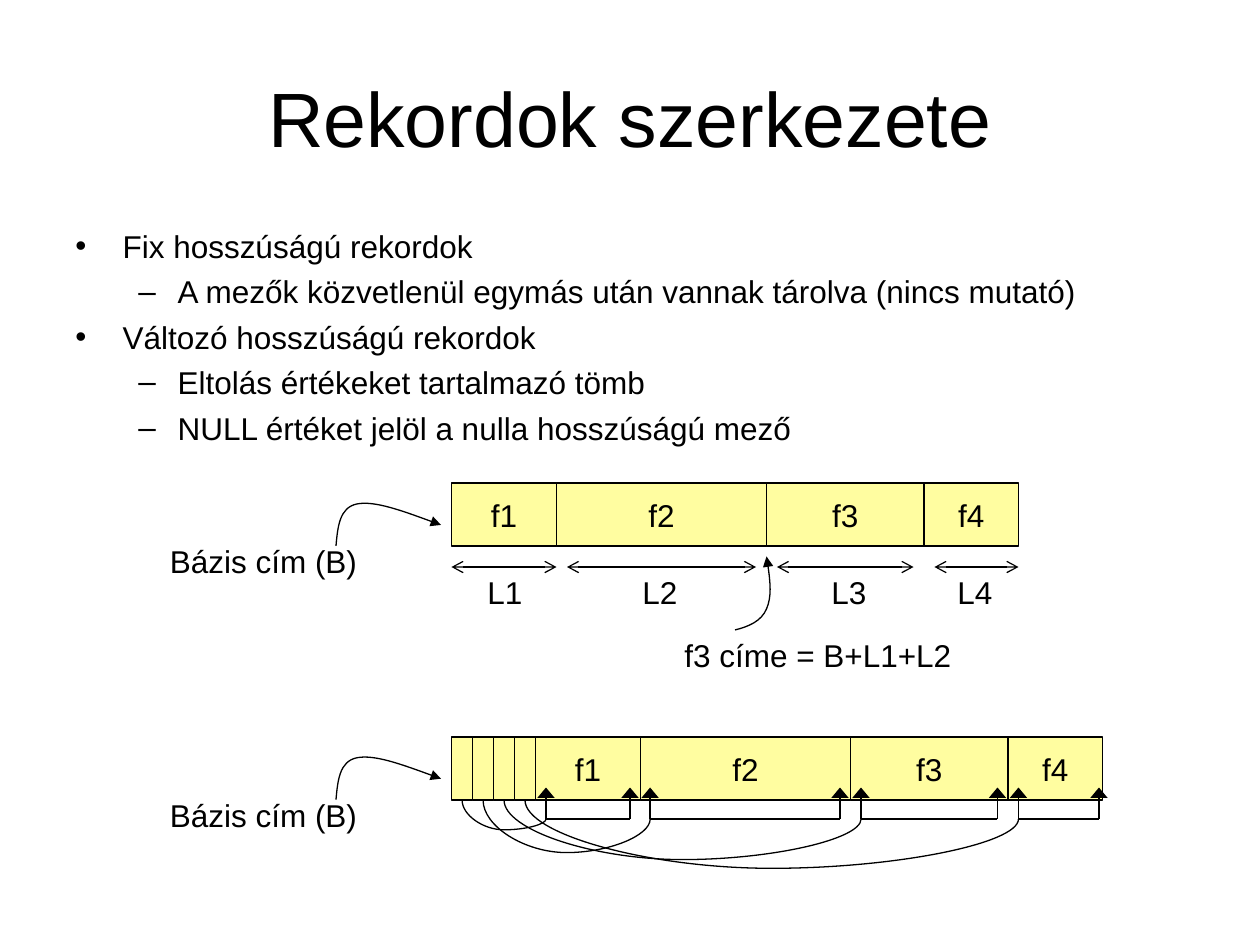
from dataclasses import dataclass
from itertools import accumulate

from lxml.etree import SubElement
from pptx import Presentation
from pptx.dml.color import RGBColor
from pptx.enum.shapes import MSO_CONNECTOR as Connector, MSO_SHAPE as Shape
from pptx.enum.text import MSO_ANCHOR as Anchor, PP_ALIGN as Align
from pptx.oxml.ns import qn
from pptx.util import Pt


@dataclass(frozen=True)
class Theme:
    font: str = "Arial"
    ink: RGBColor = RGBColor(0, 0, 0)
    field: RGBColor = RGBColor(0xFF, 0xFD, 0xA0)
    title_size: float = 44
    text_size: float = 18
    line_width: float = 0.75


class Board:
    """Draws styled elements on one slide, with lengths in points."""

    def __init__(self, slide, theme):
        self.slide = slide
        self.theme = theme

    def add_run(self, paragraph, text, size=None):
        run = paragraph.add_run()
        run.text = text
        run.font.name = self.theme.font
        run.font.size = Pt(size or self.theme.text_size)
        run.font.color.rgb = self.theme.ink

    def text(self, left, top, width, height, text="", size=None, wrap=False):
        box = self.slide.shapes.add_textbox(Pt(left), Pt(top), Pt(width), Pt(height))
        box.text_frame.word_wrap = wrap
        if text:
            self.add_run(box.text_frame.paragraphs[0], text, size)
        return box.text_frame

    def title(self, text):
        frame = self.text(36, 21.6, 648, 90, text, self.theme.title_size, wrap=True)
        frame.vertical_anchor = Anchor.MIDDLE
        frame.paragraphs[0].alignment = Align.CENTER

    def outline(self, items):
        """Set (level, text) pairs as a bulleted list."""
        frame = self.text(36, 126, 648, 356.4, wrap=True)
        for index, (level, text) in enumerate(items):
            paragraph = frame.add_paragraph() if index else frame.paragraphs[0]
            paragraph.level = level
            paragraph.space_before = Pt(4.4)
            margin, indent, bullet = ((27, -27, "•"), (58.5, -22.5, "–"))[level]
            properties = paragraph._p.get_or_add_pPr()
            properties.set("marL", str(Pt(margin)))
            properties.set("indent", str(Pt(indent)))
            SubElement(properties, qn("a:buFont"), typeface=self.theme.font)
            SubElement(properties, qn("a:buChar"), char=bullet)
            self.add_run(paragraph, text)

    def cell(self, left, top, width, height, text=""):
        shape = self.slide.shapes.add_shape(
            Shape.RECTANGLE, Pt(left), Pt(top), Pt(width), Pt(height))
        shape.shadow.inherit = False
        shape.fill.solid()
        shape.fill.fore_color.rgb = self.theme.field
        self.stroke(shape)
        if text:
            frame = shape.text_frame
            frame.word_wrap = False
            frame.vertical_anchor = Anchor.MIDDLE
            frame.paragraphs[0].alignment = Align.CENTER
            self.add_run(frame.paragraphs[0], text)

    def stroke(self, shape, head=None, tail=None, head_width="med"):
        shape.line.color.rgb = self.theme.ink
        shape.line.width = Pt(self.theme.line_width)
        line = shape._element.spPr.find(qn("a:ln"))
        if head:
            SubElement(line, qn("a:headEnd"), type=head, w=head_width)
        if tail:
            SubElement(line, qn("a:tailEnd"), type=tail)

    def connector(self, start, end, kind=Connector.STRAIGHT, **ends):
        connector = self.slide.shapes.add_connector(
            kind, *(Pt(value) for value in (*start, *end)))
        self.stroke(connector, **ends)
        SubElement(connector._element.spPr, qn("a:effectLst"))
        return connector

    def sag(self, start, end, depth):
        """Hang a curved connector that dips by depth below its start."""
        (x1, y1), (x2, y2) = start, end
        x, y = (x1 + x2) / 2, (y1 + y2) / 2
        half_width, half_height = (y2 - y1) / 2, (x2 - x1) / 2
        connector = self.connector((x + half_width, y - half_height),
                                   (x - half_width, y + half_height), Connector.CURVE)
        properties = connector._element.spPr
        properties.find(qn("a:xfrm")).set("rot", str(270 * 60000))
        geometry = properties.find(qn("a:prstGeom"))
        adjustments = geometry.find(qn("a:avLst"))
        if adjustments is None:
            adjustments = SubElement(geometry, qn("a:avLst"))
        SubElement(adjustments, qn("a:gd"), name="adj1",
                   fmla=f"val {round(depth / (y2 - y1) * 100000)}")

    def curved_arrow(self, start, *controls):
        """Draw Bézier segments; each takes three of the control points."""
        builder = self.slide.shapes.build_freeform(*start, scale=Pt(1))
        builder.add_line_segments(controls, close=False)
        shape = builder.convert_to_shape()
        outline = next(shape._element.iter(qn("a:path")))
        steps = outline.findall(qn("a:lnTo"))
        for first in range(0, len(steps), 3):
            curve = SubElement(outline, qn("a:cubicBezTo"))
            for step in steps[first:first + 3]:
                curve.append(step[0])
                outline.remove(step)
        shape.shadow.inherit = False
        shape.fill.background()
        self.stroke(shape, tail="triangle")

    def record(self, left, top):
        """Draw the four fields and the base address arrow."""
        widths = (60, 120, 90, 54)
        lefts = accumulate(widths[:-1], initial=left)
        for number, (x, width) in enumerate(zip(lefts, widths), 1):
            self.cell(x, top, width, 36, f"f{number}")
        self.text(90, top + 30, 122.4, 28.8, "Bázis cím (B)")
        self.curved_arrow((192, top + 36), (193, top + 25), (193.8, top + 14),
                          (203.8, top + 12), (213.8, top + 10),
                          (233.3, top + 17), (252, top + 24))

    def bracket(self, left, right, tip, base):
        for x in (left, right):
            self.connector((x, tip), (x, base), head="triangle", head_width="lg")
        self.connector((left, base), (right, base))


def draw_fixed_record(board):
    board.record(258, 276)
    measures = ((258, 318, 271.4), (324, 432, 360), (444, 522, 468), (534, 582, 540))
    for number, (start, end, label) in enumerate(measures, 1):
        board.connector((start, 324), (end, 324), head="arrow", tail="arrow")
        board.text(label, 324, 34.6, 28.8, f"L{number}")
    board.text(384, 360, 168.5, 28.8, "f3 címe = B+L1+L2")
    board.curved_arrow((420, 360), (427.8, 357.8), (435, 355), (438, 348),
                       (441, 341), (439.5, 329.5), (438, 318))


def draw_variable_record(board):
    left, top, slot = 258, 421.2, 12
    base = top + 46.8
    board.record(left + 4 * slot, top)
    spans = ((312, 360, 17), (371.5, 480, 30), (492, 570, 34), (582, 628, 39))
    for index, (start, end, depth) in enumerate(spans):
        x = left + index * slot
        board.cell(x, top, slot, 36)
        board.bracket(start, end, top + 28.8, base)
        board.sag((x + slot / 2, top + 36), (start, base), depth)


def main():
    presentation = Presentation()
    presentation.slide_width, presentation.slide_height = Pt(720), Pt(540)
    slide = presentation.slides.add_slide(presentation.slide_layouts[6])
    board = Board(slide, Theme())
    board.title("Rekordok szerkezete")
    board.outline((
        (0, "Fix hosszúságú rekordok"),
        (1, "A mezők közvetlenül egymás után vannak tárolva (nincs mutató)"),
        (0, "Változó hosszúságú rekordok"),
        (1, "Eltolás értékeket tartalmazó tömb"),
        (1, "NULL értéket jelöl a nulla hosszúságú mező"),
    ))
    draw_fixed_record(board)
    draw_variable_record(board)
    presentation.save("out.pptx")


if __name__ == "__main__":
    main()
